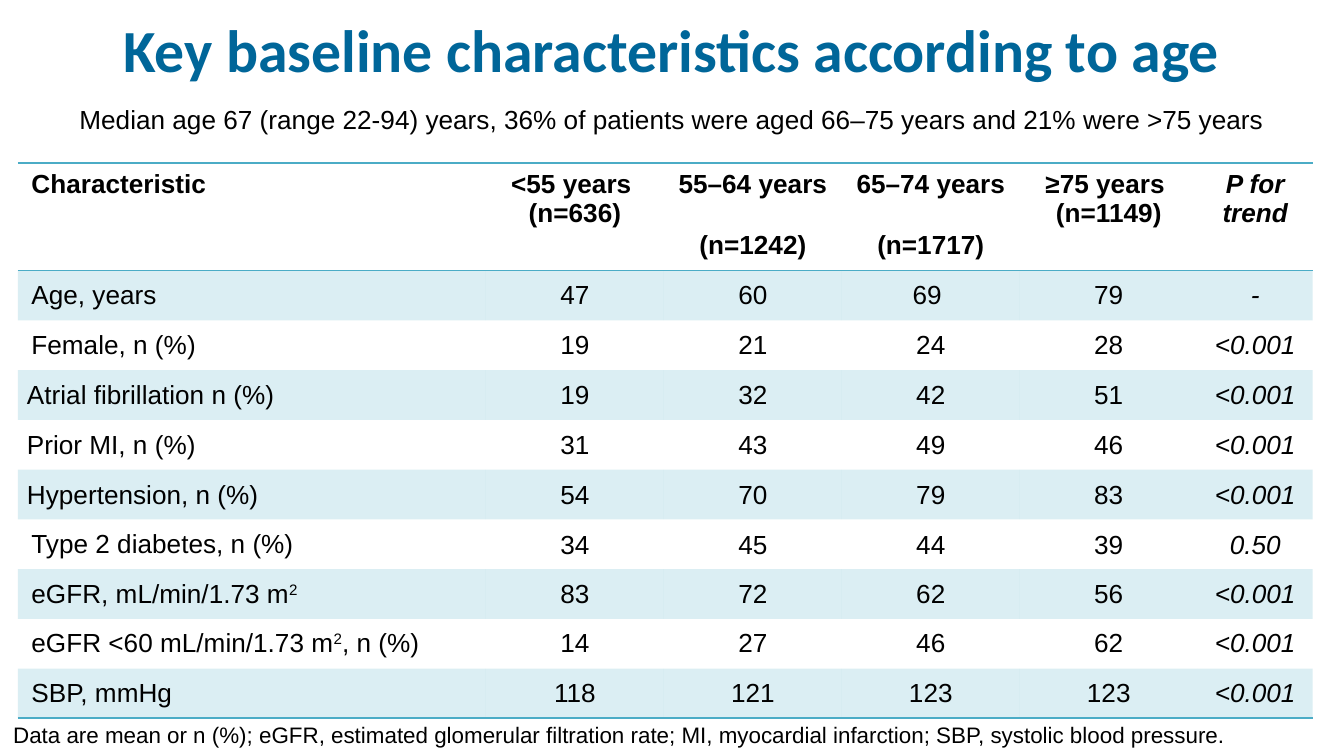
from dataclasses import dataclass

from lxml import etree
from pptx import Presentation
from pptx.dml.color import RGBColor
from pptx.enum.text import MSO_ANCHOR, PP_ALIGN
from pptx.oxml.ns import qn
from pptx.util import Emu, Pt

LEFT, CENTER = PP_ALIGN.LEFT, PP_ALIGN.CENTER
TOP, MIDDLE = MSO_ANCHOR.TOP, MSO_ANCHOR.MIDDLE
EMU_PER_PX = 914400 / 134.4
PLAIN_TABLE_STYLE = "{2D5ABB26-0587-4C30-8999-92F81FD0307C}"


@dataclass(frozen=True)
class Theme:
    title_font: str = "Calibri"
    body_font: str = "Arial"
    title_color: str = "006699"
    text_color: str = "000000"
    accent: str = "4BACC6"
    band_alpha: int = 20
    title_size: int = 32
    body_size: int = 14
    note_size: int = 12
    rule_width: int = 1


THEME = Theme()


def px(value):
    return Emu(round(value * EMU_PER_PX))


def write_text(frame, text, size=THEME.body_size, font=THEME.body_font,
               color=THEME.text_color, bold=False, italic=False, align=LEFT,
               line_spacing=None, space_after=None):
    """Write one paragraph; a newline is a line break and ² a raised 2."""
    paragraph = frame.paragraphs[0]
    paragraph.alignment = align
    paragraph.line_spacing = line_spacing
    if space_after:
        paragraph.space_after = Pt(space_after)
    for line_number, line in enumerate(text.split("\n")):
        if line_number:
            paragraph.add_line_break()
        for part in line.replace("²", "|²|").split("|"):
            if not part:
                continue
            run = paragraph.add_run()
            run.text = "2" if part == "²" else part
            run.font.size, run.font.name = Pt(size), font
            run.font.bold, run.font.italic = bold, italic
            run.font.color.rgb = RGBColor.from_string(color)
            if part == "²":
                run.font._element.set("baseline", "30000")
    # Line breaks take the size of the text around them
    for break_element in paragraph._p.findall(qn("a:br")):
        etree.SubElement(break_element, qn("a:rPr"), sz=str(size * 100))


class SlideBuilder:
    def __init__(self, slide, theme):
        self.slide = slide
        self.theme = theme

    def text(self, left, top, width, height, text, anchor=TOP, **text_format):
        shape = self.slide.shapes.add_textbox(px(left), px(top), px(width), px(height))
        shape.text_frame.word_wrap = True
        shape.text_frame.vertical_anchor = anchor
        write_text(shape.text_frame, text, **text_format)

    def table(self, left, top, column_widths, header_height, body_height, rows, tight_from):
        """Build the table; tight_from gives a row's first cell with slim margins."""
        row_count, column_count = len(rows), len(column_widths)
        shape = self.slide.shapes.add_table(
            row_count, column_count, px(left), px(top),
            px(sum(column_widths)), px(header_height + body_height))
        table = shape.table
        table.horz_banding = False
        table._tbl.tblPr.find(qn("a:tableStyleId")).text = PLAIN_TABLE_STYLE
        for column, width in zip(table.columns, column_widths):
            column.width = px(width)
        for row_index, values in enumerate(rows):
            header, last = row_index == 0, row_index == row_count - 1
            table.rows[row_index].height = px(
                header_height if header else body_height / (row_count - 1))
            edges = ["a:lnT"] * header + ["a:lnB"] * (header or last)
            for column_index, value in enumerate(values):
                cell = table.cell(row_index, column_index)
                tight = column_index >= tight_from.get(row_index, column_count)
                if tight:
                    cell.margin_left = cell.margin_right = px(9)
                    cell.margin_top = cell.margin_bottom = 0
                cell.vertical_anchor = TOP if header else MIDDLE
                write_text(cell.text_frame, value, bold=header,
                           italic=column_index == column_count - 1,
                           align=CENTER if column_index else LEFT,
                           line_spacing=1.06 if tight else None)
                self.cell_edges(cell, edges)
                self.cell_fill(cell, banded=row_index % 2 == 1)

    def cell_edges(self, cell, edges):
        properties = cell._tc.get_or_add_tcPr()
        for edge in edges:
            line = etree.SubElement(properties, qn(edge), w=str(Pt(self.theme.rule_width)))
            fill = etree.SubElement(line, qn("a:solidFill"))
            etree.SubElement(fill, qn("a:srgbClr"), val=self.theme.accent)

    def cell_fill(self, cell, banded):
        if not banded:
            cell.fill.background()
            return
        cell.fill.solid()
        cell.fill.fore_color.rgb = RGBColor.from_string(self.theme.accent)
        color = cell._tc.tcPr.find(qn("a:solidFill")).find(qn("a:srgbClr"))
        etree.SubElement(color, qn("a:alpha"), val=str(self.theme.band_alpha * 1000))


ROWS = [
    ["Characteristic", "<55 years \n(n=636)", "55–64 years \n(n=1242)",
     "65–74 years \n(n=1717)", "≥75 years \n(n=1149)", "P for trend"],
    ["Age, years", "47", "60", "69 ", "79", "-"],
    ["Female, n (%)", "19", "21", "24", "28", "<0.001"],
    ["Atrial fibrillation n (%)", "19", "32", "42", "51", "<0.001"],
    ["Prior MI, n (%)", "31", "43", "49", "46", "<0.001"],
    ["Hypertension, n (%)", "54", "70", "79", "83", "<0.001"],
    ["Type 2 diabetes, n (%)", "34", "45", "44", "39", "0.50"],
    ["eGFR, mL/min/1.73 m²", "83", "72", "62", "56", "<0.001"],
    ["eGFR <60 mL/min/1.73 m², n (%)", "14", "27", "46", "62", "<0.001"],
    ["SBP, mmHg", "118", "121", "123", "123", "<0.001"],
]


def main():
    presentation = Presentation()
    presentation.slide_width, presentation.slide_height = px(1344), px(756)
    slide = presentation.slides.add_slide(presentation.slide_layouts[6])
    builder = SlideBuilder(slide, THEME)

    # Title
    builder.text(0, 7, 1344, 83, "Key baseline characteristics according to age",
                 anchor=MIDDLE, size=THEME.title_size, font=THEME.title_font,
                 color=THEME.title_color, bold=True, align=CENTER)

    # Baseline table
    builder.table(18, 163, [468] + [178] * 4 + [115], 94, 448, ROWS,
                  tight_from={3: 0, 4: 0, 5: 0, 6: 1})

    # Footnote
    builder.text(0, 715, 1344, 41,
                 "Data are mean or n (%); eGFR, estimated glomerular filtration rate; "
                 "MI, myocardial infarction; SBP, systolic blood pressure.",
                 size=THEME.note_size)

    # Age summary
    builder.text(0, 97, 1344, 45,
                 "Median age 67 (range 22-94) years, 36% of patients were aged "
                 "66–75 years and 21% were >75 years", align=CENTER, space_after=6)

    presentation.save("out.pptx")


if __name__ == "__main__":
    main()
